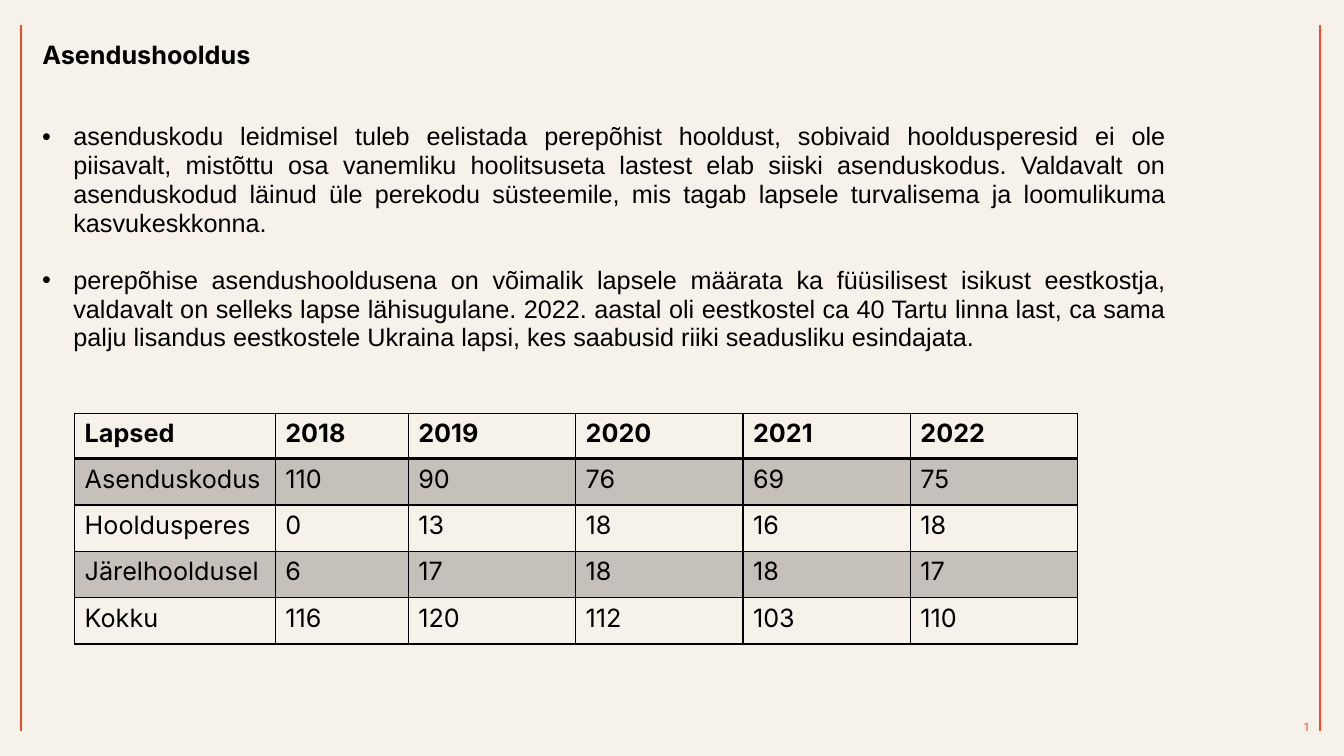
import dataclasses
import pptx
import pptx.dml.color
import pptx.enum.shapes
import pptx.enum.text
import pptx.oxml
import pptx.oxml.ns
import pptx.util
from lxml import etree

Inches = pptx.util.Inches
Pt = pptx.util.Pt
qn = pptx.oxml.ns.qn
Align = pptx.enum.text.PP_ALIGN
Anchor = pptx.enum.text.MSO_ANCHOR


@dataclasses.dataclass(frozen=True)
class Theme:
    """Colours, fonts and type sizes of the deck."""
    paper: str = "F7F2E9"
    accent: str = "F14C2A"
    ink: str = "000000"
    heading_font: str = "Inter"
    body_font: str = "Arial"
    text_size: int = 18
    number_size: int = 8


THEME = Theme()
TITLE = "Asendushooldus"
POINTS = [
    "asenduskodu leidmisel tuleb eelistada perepõhist hooldust, sobivaid hooldusperesid ei ole "
    "piisavalt, mistõttu osa vanemliku hoolitsuseta lastest elab siiski asenduskodus. Valdavalt on "
    "asenduskodud läinud üle perekodu süsteemile, mis tagab lapsele turvalisema ja loomulikuma "
    "kasvukeskkonna.",
    "perepõhise asendushooldusena on võimalik lapsele määrata ka füüsilisest isikust eestkostja, "
    "valdavalt on selleks lapse lähisugulane. 2022. aastal oli eestkostel ca 40 Tartu linna last, "
    "ca sama palju lisandus eestkostele Ukraina lapsi, kes saabusid riiki seadusliku esindajata.",
]
CHILDREN = [
    ["Lapsed", "2018", "2019", "2020", "2021", "2022"],
    ["Asenduskodus", "110", "90", "76", "69", "75"],
    ["Hooldusperes", "0", "13", "18", "16", "18"],
    ["Järelhooldusel", "6", "17", "18", "18", "17"],
    ["Kokku", "116", "120", "112", "103", "110"],
]
COLUMN_WIDTHS = [1.99, 1.32] + [1.66] * 4
ROW_HEIGHTS = [0.45] + [0.46] * 4


def colour(value):
    """Return an RGB colour from its hex text."""
    return pptx.dml.color.RGBColor.from_string(value)


def apply(target, values):
    """Set every attribute in a dict of format values."""
    for name, value in values.items():
        setattr(target, name, value)


def style_font(font, family, size, ink, bold=False):
    """Give a font its family, size, colour and weight."""
    apply(font, {"name": family, "size": Pt(size), "bold": bold})
    font.color.rgb = colour(ink)


def style_frame(frame, anchor, top=0, right=0.1, bottom=0):
    """Set the wrapping, anchor and insets of a text frame."""
    apply(frame, {"word_wrap": True, "vertical_anchor": anchor,
                  "margin_left": Inches(0.1), "margin_right": Inches(right),
                  "margin_top": Inches(top), "margin_bottom": Inches(bottom)})


def add_side_rules(page, left, top, width, height):
    """Draw the vertical rules at both sides of the box."""
    for x in (left, left + width):
        rule = page.shapes.add_connector(
            pptx.enum.shapes.MSO_CONNECTOR.STRAIGHT,
            Inches(x), Inches(top), Inches(x), Inches(top + height))
        rule.line.color.rgb = colour(THEME.accent)
        rule.line.width = Pt(1.5)
        etree.SubElement(rule._element.spPr, qn("a:effectLst"))


def add_page_number(page, left, top, width, height):
    """Place the slide number field at the lower right of the box."""
    box = page.shapes.add_textbox(*map(Inches, (left, top, width, height)))
    style_frame(box.text_frame, Anchor.BOTTOM, top=0.05, right=0, bottom=0.05)
    para = box.text_frame.paragraphs[0]
    para.alignment = Align.RIGHT
    span = para.add_run()
    span.text = "7"
    style_font(span.font, THEME.heading_font, THEME.number_size, THEME.accent)
    field = span._r
    field.tag = qn("a:fld")
    field.set("id", "{B6F15528-21DE-4FAA-801E-634DDDAF4B2B}")
    field.set("type", "slidenum")


def add_title(page, left, top, width, height):
    """Move and format the title placeholder."""
    title = page.shapes.title
    apply(title, {"left": Inches(left), "top": Inches(top),
                  "width": Inches(width), "height": Inches(height)})
    style_frame(title.text_frame, Anchor.TOP)
    title.text_frame.auto_size = pptx.enum.text.MSO_AUTO_SIZE.NONE
    para = title.text_frame.paragraphs[0]
    para.text = TITLE
    apply(para, {"alignment": Align.LEFT, "line_spacing": 0.9})
    style_font(para.runs[0].font, THEME.heading_font, THEME.text_size, THEME.ink, True)


def add_points(page, left, top, width, height):
    """Write the justified bullet points in the box."""
    box = page.shapes.add_textbox(*map(Inches, (left, top, width, height)))
    style_frame(box.text_frame, Anchor.TOP)
    for index, point in enumerate(POINTS):
        para = box.text_frame.paragraphs[0] if index == 0 else box.text_frame.add_paragraph()
        apply(para, {"alignment": Align.JUSTIFY, "line_spacing": 0.95,
                     "space_before": Pt(10.2 if index else 0), "space_after": Pt(10.2)})
        properties = para._p.get_or_add_pPr()
        properties.set("marL", str(Inches(0.31)))
        properties.set("indent", str(-Inches(0.31)))
        etree.SubElement(properties, qn("a:buFont")).set("typeface", THEME.body_font)
        etree.SubElement(properties, qn("a:buChar")).set("char", "•")
        span = para.add_run()
        span.text = point
        style_font(span.font, THEME.body_font, THEME.text_size, THEME.ink)


def add_borders(cell, widths):
    """Draw the four cell borders with the given widths in points."""
    properties = cell._tc.get_or_add_tcPr()
    for side, width in widths.items():
        border = etree.SubElement(properties, qn("a:ln" + side))
        border.set("w", str(Pt(width)))
        fill = etree.SubElement(border, qn("a:solidFill"))
        etree.SubElement(fill, qn("a:srgbClr")).set("val", THEME.ink)


def fill_cell(cell, shaded):
    """Shade the cell with a light tint of ink or leave it clear."""
    if not shaded:
        cell.fill.background()
        return
    cell.fill.solid()
    cell.fill.fore_color.rgb = colour(THEME.ink)
    tint = cell._tc.tcPr.find(qn("a:solidFill")).find(qn("a:srgbClr"))
    etree.SubElement(tint, qn("a:alpha")).set("val", "20000")


def add_children_table(page, left, top):
    """Build the table of children in care from its upper left corner."""
    table = page.shapes.add_table(
        len(CHILDREN), len(COLUMN_WIDTHS), Inches(left), Inches(top),
        Inches(sum(COLUMN_WIDTHS)), Inches(sum(ROW_HEIGHTS))).table
    table.horz_banding = False
    for column, width in zip(table.columns, COLUMN_WIDTHS):
        column.width = Inches(width)
    for row, height in zip(table.rows, ROW_HEIGHTS):
        row.height = Inches(height)
    for row_index, values in enumerate(CHILDREN):
        for column_index, value in enumerate(values):
            cell = table.cell(row_index, column_index)
            cell.text = value
            style_font(cell.text_frame.paragraphs[0].runs[0].font, THEME.heading_font,
                       THEME.text_size, THEME.ink, row_index == 0)
            add_borders(cell, {"L": 1, "R": 1, "T": 2 if row_index == 1 else 1,
                               "B": 2 if row_index == 0 else 1})
            fill_cell(cell, row_index % 2 == 1)


def main():
    """Build the slide and save the deck."""
    deck = pptx.Presentation()
    deck.slide_width, deck.slide_height = Inches(13.33), Inches(7.5)
    page = deck.slides.add_slide(deck.slide_layouts[5])
    page.background.fill.solid()
    page.background.fill.fore_color.rgb = colour(THEME.paper)
    add_side_rules(page, 0.21, 0.25, 12.88, 7)
    add_page_number(page, 10.67, 6.93, 2.31, 0.4)
    add_title(page, 0.32, 0.42, 11.34, 0.4)
    add_points(page, 0.32, 1.22, 11.34, 2.4)
    add_children_table(page, 0.74, 4.1)
    deck.save("out.pptx")


if __name__ == "__main__":
    main()
